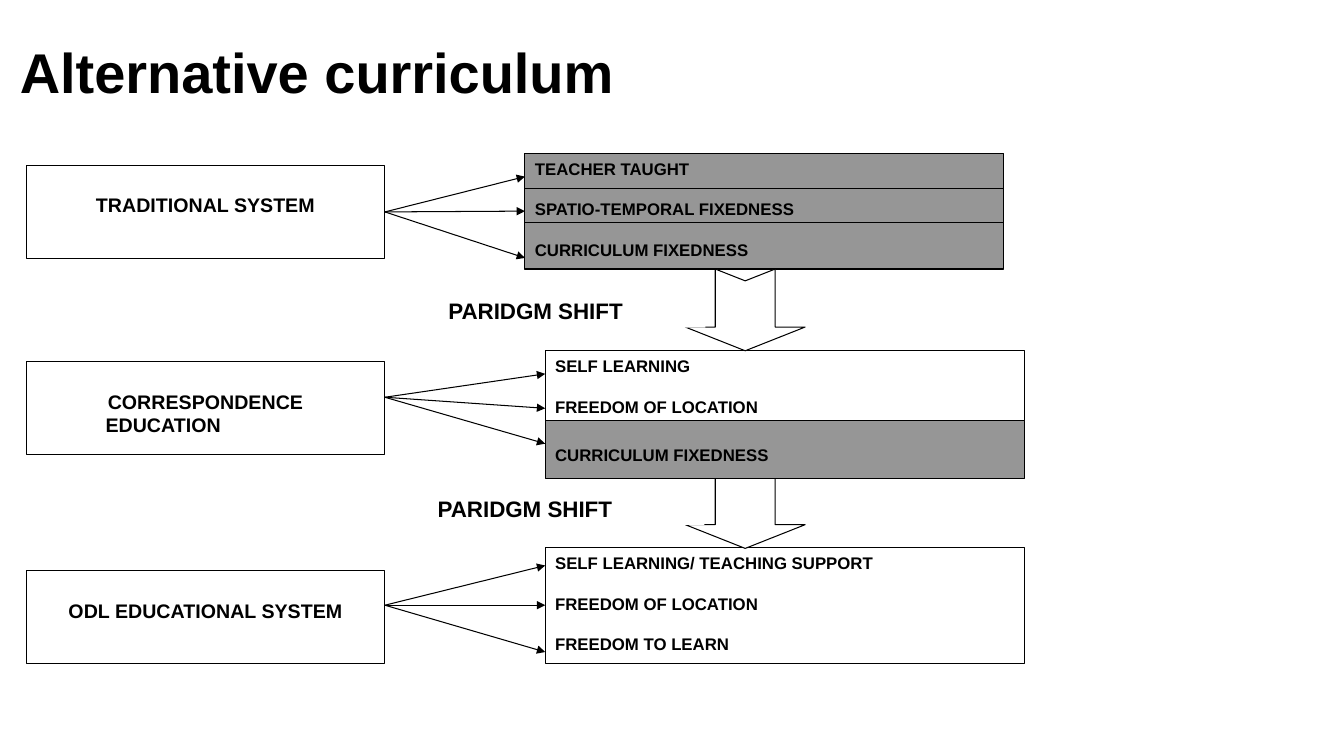
from lxml import etree
from pptx import Presentation
from pptx.dml.color import RGBColor
from pptx.enum.shapes import MSO_CONNECTOR, MSO_SHAPE
from pptx.enum.text import MSO_ANCHOR, PP_ALIGN
from pptx.oxml.ns import qn
from pptx.util import Cm, Pt

RECTANGLE = MSO_SHAPE.RECTANGLE
NOTCHED_ARROW = MSO_SHAPE.NOTCHED_RIGHT_ARROW
STRAIGHT = MSO_CONNECTOR.STRAIGHT
LEFT, CENTER = PP_ALIGN.LEFT, PP_ALIGN.CENTER
TOP, MIDDLE = MSO_ANCHOR.TOP, MSO_ANCHOR.MIDDLE
LEFT_SIDE, RIGHT_SIDE = 1, 3

BLACK, WHITE, GREY = "000000", "FFFFFF", "969696"
SYSTEM_X, SYSTEM_W, SYSTEM_H = 0.66, 9.04, 2.34
FEATURE_W, FEATURE_H = 12.07, 2.92
TRADITIONAL_X, LATER_X = 13.23, 13.74


def color(value):
    return RGBColor.from_string(value)


def write(shape, lines, size, align=LEFT, anchor=TOP, top=0.13, gap=0):
    """Fill a shape with bold lines, gap points apart."""
    frame = shape.text_frame
    frame.word_wrap = True
    frame.vertical_anchor = anchor
    frame.margin_left = frame.margin_right = Cm(0.25)
    frame.margin_top, frame.margin_bottom = Cm(top), Cm(0.13)
    for index, line in enumerate(lines):
        para = frame.add_paragraph() if index else frame.paragraphs[0]
        para.alignment = align
        para.space_before = Pt(gap if index else 0)
        span = para.add_run()
        span.text = line
        span.font.name, span.font.size, span.font.bold = "Arial", Pt(size), True
        span.font.color.rgb = color(BLACK)
    return frame


def add_box(page, x, y, width, height, fill=WHITE, kind=RECTANGLE, outlined=True):
    box = page.shapes.add_shape(kind, Cm(x), Cm(y), Cm(width), Cm(height))
    box.shadow.inherit = False
    box.fill.solid()
    box.fill.fore_color.rgb = color(fill)
    if outlined:
        box.line.color.rgb = color(BLACK)
        box.line.width = Pt(0.75)
    else:
        box.line.fill.background()
    return box


def add_system(page, y, lines):
    box = add_box(page, SYSTEM_X, y, SYSTEM_W, SYSTEM_H)
    write(box, lines, 14, align=CENTER, top=0.7)
    return box


def add_features(page, x, y, height, lines, fill=WHITE, top=0.13):
    box = add_box(page, x, y, FEATURE_W, height, fill)
    write(box, lines, 12, top=top, gap=14.8)
    return box


def add_line(page, x1, y1, x2, y2, arrow=False):
    line = page.shapes.add_connector(STRAIGHT, Cm(x1), Cm(y1), Cm(x2), Cm(y2))
    line.line.color.rgb = color(BLACK)
    line.line.width = Pt(0.75)
    if arrow:
        etree.SubElement(line.line._get_or_add_ln(), qn("a:tailEnd"), type="triangle")
    etree.SubElement(line._element.spPr, qn("a:effectLst"))
    return line


def add_fan(page, hub_y, tip_x, tips):
    """Three arrows from a system box to its features."""
    return [add_line(page, SYSTEM_X + SYSTEM_W, hub_y, tip_x, tip_y, arrow=True)
            for tip_y in tips]


def add_shift(page, arrow_y, label_x, label_y, label_w):
    """A downward block arrow with its label."""
    arrow = add_box(page, 17.75, arrow_y, 2.06, 3.02, kind=NOTCHED_ARROW)
    arrow.rotation = 90
    arrow.adjustments[0], arrow.adjustments[1] = 0.5, 0.29
    label = add_box(page, label_x, label_y, label_w, 0.89, outlined=False)
    write(label, ["PARIDGM SHIFT"], 16, align=CENTER)


def main():
    deck = Presentation()
    deck.slide_width, deck.slide_height = Cm(33.87), Cm(19.05)
    page = deck.slides.add_slide(deck.slide_layouts[6])

    # Title
    title = page.shapes.add_textbox(Cm(0.25), Cm(0.61), Cm(25.96), Cm(2.34))
    write(title, ["Alternative curriculum"], 40, anchor=MIDDLE)

    # Systems on the left
    traditional = add_system(page, 4.17, ["TRADITIONAL SYSTEM"])
    correspondence = add_system(page, 9.12, ["CORRESPONDENCE", "EDUCATION"])
    education = correspondence.text_frame.paragraphs[1]
    education.alignment = LEFT
    education._p.get_or_add_pPr().set("marL", str(Cm(1.75)))
    add_system(page, 14.38, ["ODL EDUCATIONAL SYSTEM"])

    # Features on the right
    fixed = add_features(page, TRADITIONAL_X, 3.86, FEATURE_H,
                         ["TEACHER TAUGHT", "SPATIO-TEMPORAL FIXEDNESS",
                          "CURRICULUM FIXEDNESS"], fill=GREY)
    for divider_y in (4.75, 5.61):
        add_line(page, TRADITIONAL_X, divider_y, TRADITIONAL_X + FEATURE_W, divider_y)
    add_features(page, LATER_X, 8.84, 1.75, ["SELF LEARNING", "FREEDOM OF LOCATION"])
    free = add_features(page, LATER_X, 13.79, FEATURE_H,
                        ["SELF LEARNING/ TEACHING SUPPORT", "FREEDOM OF LOCATION",
                         "FREEDOM TO LEARN"])

    # Paradigm shifts, the second one tucked under the grey box
    add_shift(page, 6.3, 9.22, 7.37, 8.56)
    add_shift(page, 11.28, 8.71, 12.34, 9.04)
    add_features(page, LATER_X, 10.59, 1.47, ["CURRICULUM FIXEDNESS"], fill=GREY, top=0.62)

    # Arrows from systems to features
    traditional_fan = add_fan(page, 5.34, TRADITIONAL_X, (4.45, 5.34, 6.5))
    for arrow in traditional_fan:
        arrow.begin_connect(traditional, RIGHT_SIDE)
    traditional_fan[1].end_connect(fixed, LEFT_SIDE)
    add_fan(page, 10.01, LATER_X, (9.42, 10.29, 11.18))
    odl_fan = add_fan(page, 15.25, LATER_X, (14.25, 15.25, 16.43))
    odl_fan[1].end_connect(free, LEFT_SIDE)

    deck.save("out.pptx")


if __name__ == "__main__":
    main()
